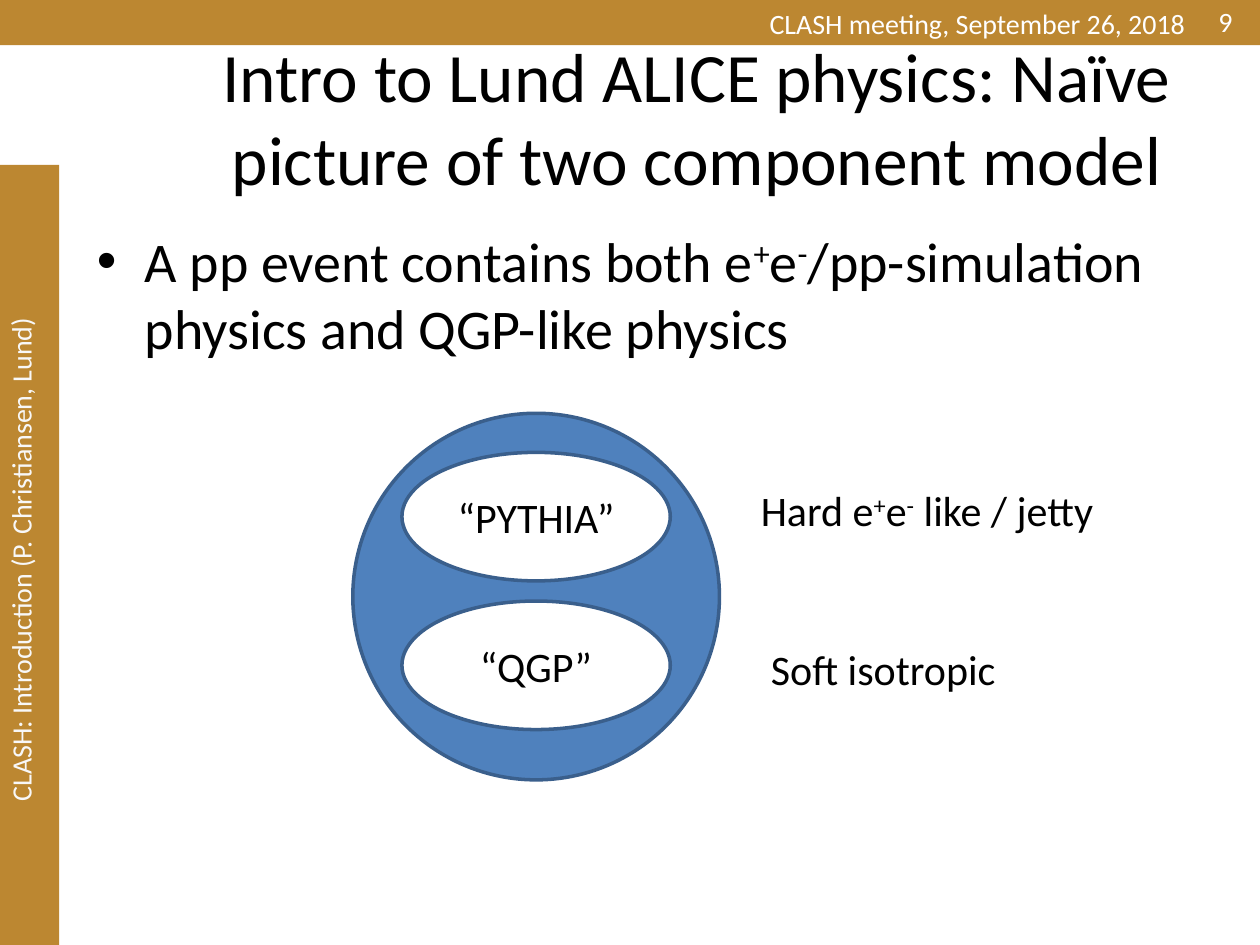
from dataclasses import dataclass

from lxml import etree
from pptx import Presentation
from pptx import util as u
from pptx.dml.color import RGBColor
from pptx.enum import shapes, text
from pptx.oxml import ns

GOLD = RGBColor(0xBC, 0x87, 0x31)
BLUE = RGBColor(0x4F, 0x81, 0xBD)
DARK_BLUE = RGBColor(0x3A, 0x5F, 0x8C)
WHITE = RGBColor(0xFF, 0xFF, 0xFF)
OFF_WHITE = RGBColor(0xF8, 0xF8, 0xF8)
BLACK = RGBColor(0, 0, 0)
FONT = "Calibri"
LEFT, CENTER, RIGHT = text.PP_ALIGN.LEFT, text.PP_ALIGN.CENTER, text.PP_ALIGN.RIGHT
TOP, MIDDLE = text.MSO_ANCHOR.TOP, text.MSO_ANCHOR.MIDDLE
RECTANGLE, OVAL = shapes.MSO_SHAPE.RECTANGLE, shapes.MSO_SHAPE.OVAL


@dataclass(frozen=True)
class Box:
    left: float
    top: float
    width: float
    height: float

    def lengths(self) -> list:
        return [u.Inches(n) for n in (self.left, self.top, self.width, self.height)]


@dataclass(frozen=True)
class Label:
    box: Box
    wording: tuple[str, ...]
    size: float
    color: RGBColor = BLACK
    align: text.PP_ALIGN = LEFT
    anchor: text.MSO_ANCHOR = TOP
    wrap: bool = False
    rotation: float = 0
    bullet: bool = False


@dataclass(frozen=True)
class Figure:
    kind: shapes.MSO_SHAPE
    box: Box
    fill: RGBColor
    outline: RGBColor | None = None
    caption: str = ""


LABELS = (
    Label(Box(-1.88, 4.23, 4.09, 0.37), ("CLASH: Introduction (P. Christiansen, Lund)",),
          16, OFF_WHITE, rotation=270),
    Label(Box(6.01, 0, 3.55, 0.37), ("CLASH meeting, September 26, 2018",), 16, WHITE),
    Label(Box(1.56, 0.3, 7.94, 1.25),
          ("Intro to Lund ALICE physics: Naïve picture of two component model",),
          39.6, align=CENTER, anchor=MIDDLE, wrap=True),
    Label(Box(0.67, 1.75, 8.83, 5.62),
          ("A pp event contains both e", "+", "e", "-",
           "/pp-simulation physics and QGP-like physics"),
          32, wrap=True, bullet=True),
    Label(Box(7.55, -0.03, 2.33, 0.4), ("9",), 16, WHITE, RIGHT, MIDDLE, wrap=True),
    Label(Box(5.94, 3.8, 2.99, 0.5), ("Hard e", "+", "e", "-", " like / jetty"), 24),
    Label(Box(6.02, 5.06, 2.01, 0.5), ("Soft isotropic",), 24),
)

FIGURES = (
    Figure(RECTANGLE, Box(-0.02, 0, 10.02, 0.36), GOLD),
    Figure(RECTANGLE, Box(0, 1.31, 0.47, 6.2), GOLD),
    Figure(OVAL, Box(2.8, 3.28, 2.91, 2.91), BLUE, DARK_BLUE),
    Figure(OVAL, Box(3.19, 3.59, 2.13, 1.02), WHITE, DARK_BLUE, "“PYTHIA”"),
    Figure(OVAL, Box(3.19, 4.77, 2.13, 1.02), WHITE, DARK_BLUE, "“QGP”"),
)


def format_font(font, size: float, color: RGBColor) -> None:
    font.name = FONT
    font.size = u.Pt(size)
    font.color.rgb = color


def draw_figure(slide, figure: Figure) -> None:
    shape = slide.shapes.add_shape(figure.kind, *figure.box.lengths())
    shape.shadow.inherit = False
    shape.fill.solid()
    shape.fill.fore_color.rgb = figure.fill
    if figure.outline is None:
        shape.line.fill.background()
    else:
        shape.line.color.rgb = figure.outline
        shape.line.width = u.Pt(2)
    if figure.caption:
        frame = shape.text_frame
        frame.text = figure.caption
        frame.vertical_anchor = MIDDLE
        paragraph = frame.paragraphs[0]
        paragraph.alignment = CENTER
        format_font(paragraph.runs[0].font, 24, BLACK)


def add_bullet(paragraph) -> None:
    properties = paragraph._p.get_or_add_pPr()
    properties.set("marL", str(u.Inches(0.38)))
    properties.set("indent", str(u.Inches(-0.38)))
    etree.SubElement(properties, ns.qn("a:buFont"), typeface="Arial")
    etree.SubElement(properties, ns.qn("a:buChar"), char="•")


def draw_label(slide, label: Label) -> None:
    shape = slide.shapes.add_textbox(*label.box.lengths())
    shape.rotation = label.rotation
    frame = shape.text_frame
    frame.word_wrap = label.wrap
    frame.vertical_anchor = label.anchor
    if not label.wrap:
        frame.auto_size = text.MSO_AUTO_SIZE.SHAPE_TO_FIT_TEXT
    paragraph = frame.paragraphs[0]
    paragraph.alignment = label.align
    if label.bullet:
        add_bullet(paragraph)
    for index, words in enumerate(label.wording):
        run = paragraph.add_run()
        run.text = words
        format_font(run.font, label.size, label.color)
        if index % 2:
            run._r.get_or_add_rPr().set("baseline", "30000")


def main() -> None:
    presentation = Presentation()
    presentation.slide_width = u.Inches(10)
    presentation.slide_height = u.Inches(7.5)
    slide = presentation.slides.add_slide(presentation.slide_layouts[6])
    for figure in FIGURES:
        draw_figure(slide, figure)
    for label in LABELS:
        draw_label(slide, label)
    presentation.save("out.pptx")


if __name__ == "__main__":
    main()
